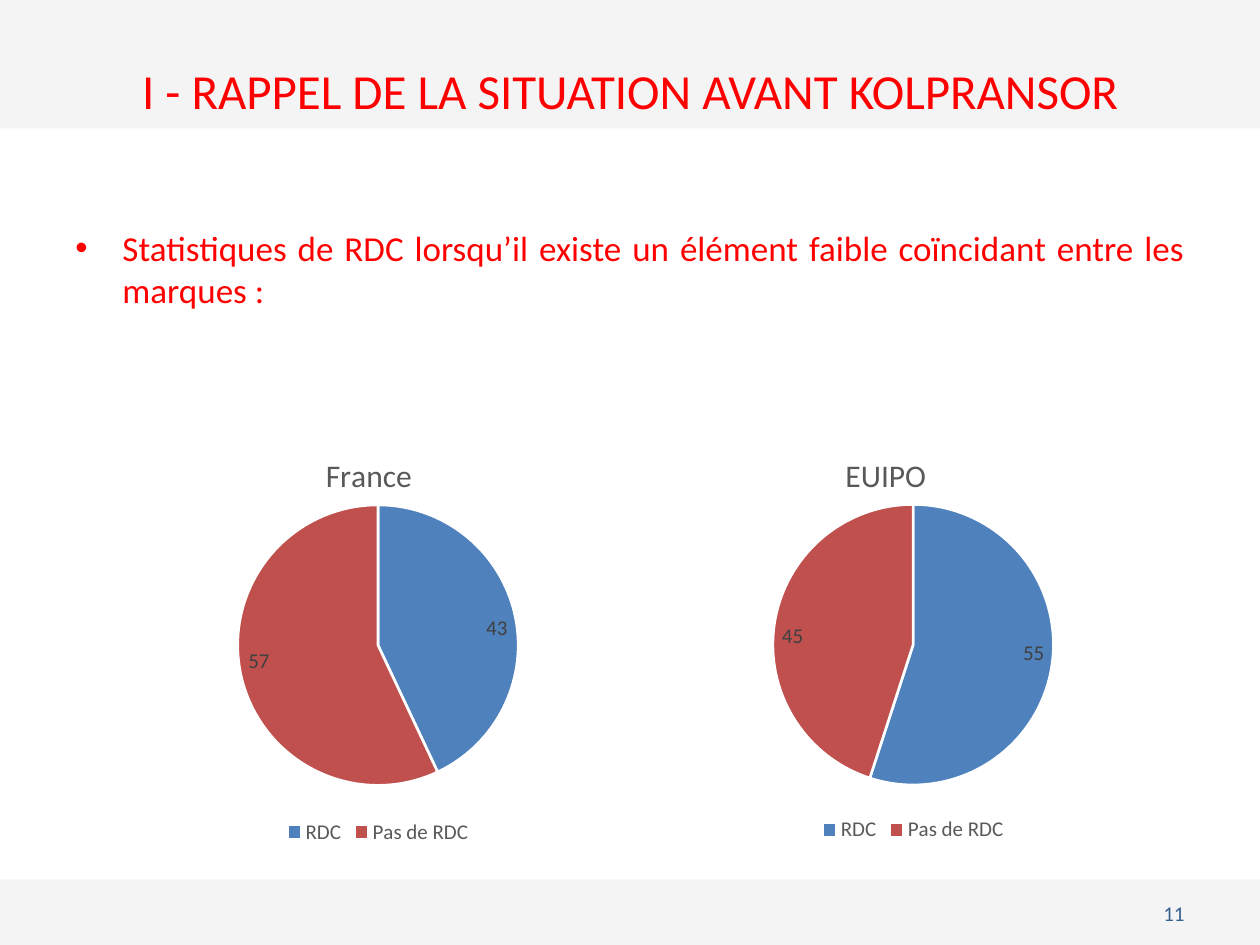
from lxml.etree import SubElement as Sub
from pptx import Presentation
from pptx.chart.data import CategoryChartData as Data
from pptx.dml.color import RGBColor as RGB
from pptx.enum.chart import XL_CHART_TYPE as Kind, XL_LABEL_POSITION as Pos
from pptx.enum.chart import XL_LEGEND_POSITION as Side
from pptx.enum.shapes import MSO_SHAPE as Form
from pptx.enum.text import MSO_ANCHOR as Anchor, PP_ALIGN as Align
from pptx.oxml import parse_xml
from pptx.oxml.ns import qn, nsdecls
from pptx.util import Cm, Pt

HUES = {"band": "EAEAEA", "red": "FF0000", "page": "376092", "white": "FFFFFF",
        "grey": "595959", "label": "404040", "yes": "4F81BD", "no": "C0504D"}
FONT = "Calibri"


def style(font, size, hue):
    font.name, font.size, font.bold = FONT, Pt(size), False
    font.color.rgb = RGB.from_string(HUES[hue])


def place(node, spot, **dims):
    for old in node.findall(qn("c:layout")):
        node.remove(old)
    inner = '<c:layoutTarget val="inner"/>' if "w" in dims else ""
    modes = "".join(f'<c:{k}Mode val="edge"/>' for k in "xy")
    vals = "".join(f'<c:{k} val="{v:.3f}"/>' for k, v in dims.items())
    node.insert(spot, parse_xml(
        f'<c:layout {nsdecls("c")}><c:manualLayout>{inner}{modes}{vals}'
        '</c:manualLayout></c:layout>'))


deck = Presentation()
deck.slide_width, deck.slide_height = Cm(25.4), Cm(19.05)
slide = deck.slides.add_slide(deck.slide_layouts[6])
shapes = slide.shapes

for top, wide, high in [(17.73, 25.5, 1.4), (-0.08, 25.4, 2.67)]:
    band = shapes.add_shape(Form.RECTANGLE, 0, Cm(top), Cm(wide), Cm(high))
    band.shadow.inherit = False
    band.fill.solid()
    band.fill.fore_color.rgb = RGB.from_string(HUES["band"])
    band.line.fill.background()
    tint = band.fill._xPr.find(".//" + qn("a:srgbClr"))
    Sub(tint, qn("a:alpha"), val="50000")

texts = [
    ("I - RAPPEL DE LA SITUATION AVANT KOLPRANSOR", (1.27, 1.32, 22.86, 1),
     28, "red", Align.CENTER, Anchor.MIDDLE),
    ("Statistiques de RDC lorsqu’il existe un élément faible coïncidant entre les marques :",
     (1.27, 4.45, 22.86, 12.57), 20, "red", Align.JUSTIFY, Anchor.TOP),
    ("11", (18.2, 17.9, 5.93, 1.02), 12, "page", Align.RIGHT, Anchor.MIDDLE),
]
for words, box, size, hue, align, anchor in texts:
    frame = shapes.add_textbox(*map(Cm, box)).text_frame
    frame.word_wrap = True
    frame.vertical_anchor = anchor
    para = frame.paragraphs[0]
    para.alignment = align
    run = para.add_run()
    run.text = words
    style(run.font, size, hue)
    if align == Align.JUSTIFY:
        props = para._p.get_or_add_pPr()
        props.set("marL", str(Cm(0.95)))
        props.set("indent", str(-Cm(0.95)))
        Sub(props, qn("a:buFont"), typeface="Arial")
        Sub(props, qn("a:buChar"), char="•")

disc = 5.66
pies = [("France", (43, 57), (2.3, 8.33, 10.65, 8.8), 0.39),
        ("EUIPO", (55, 45), (12.7, 8.33, 11.43, 8.75), 0.37)]
for name, vals, box, left in pies:
    data = Data()
    data.categories = ["RDC", "Pas de RDC"]
    data.add_series("Series 1", vals)
    chart = shapes.add_chart(Kind.PIE, *map(Cm, box), data).chart
    style(chart.font, 12, "grey")

    chart.has_title = True
    title = chart.chart_title
    run = title.text_frame.paragraphs[0].add_run()
    run.text = name
    style(run.font, 18, "grey")
    place(title.element, 1, x=left, y=0.08)

    wide, high = disc / box[2], disc / box[3]
    area = chart.element.find(".//" + qn("c:plotArea"))
    place(area, 0, x=(1 - wide) / 2, y=0.21, w=wide, h=high)

    chart.has_legend = True
    chart.legend.position = Side.BOTTOM
    chart.legend.include_in_layout = False
    style(chart.legend.font, 12, "grey")

    plot = chart.plots[0]
    plot.vary_by_categories = True
    plot.has_data_labels = True
    labels = plot.data_labels
    labels.show_value = True
    labels.show_percentage = False
    labels.position = Pos.INSIDE_END
    style(labels.font, 12, "label")
    for i, hue in enumerate(("yes", "no")):
        look = plot.series[0].points[i].format
        look.fill.solid()
        look.fill.fore_color.rgb = RGB.from_string(HUES[hue])
        look.line.color.rgb = RGB.from_string(HUES["white"])
        look.line.width = Pt(1.5)

deck.save("out.pptx")
